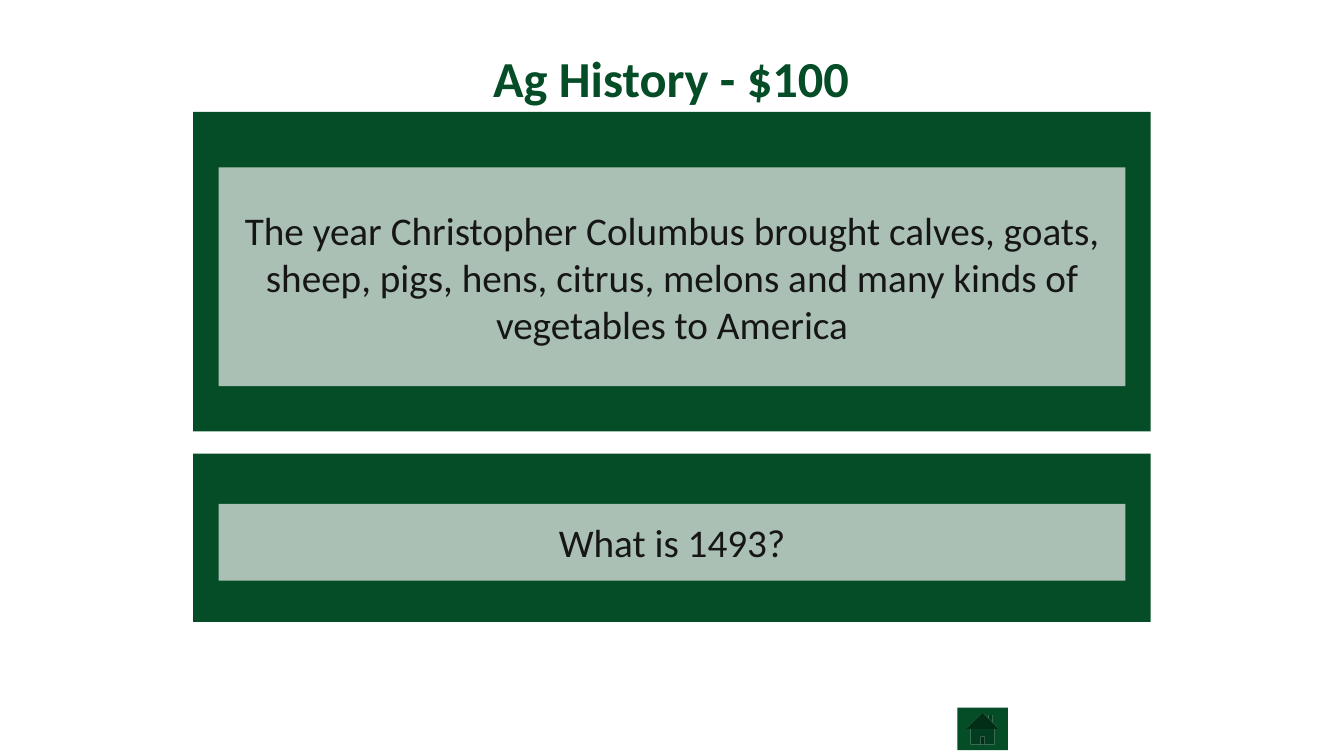
from lxml import etree
from pptx import Presentation
from pptx.dml.color import RGBColor
from pptx.enum.shapes import MSO_SHAPE
from pptx.enum.text import MSO_ANCHOR, MSO_AUTO_SIZE, PP_ALIGN
from pptx.oxml.ns import qn
from pptx.util import Cm, Pt

GREEN = RGBColor(0x04, 0x4D, 0x27)
PALE = RGBColor(0xF2, 0xF2, 0xF2)
INK = RGBColor(0x16, 0x16, 0x16)
FONT = "Calibri"


def add_block(slide, kind, left, top, width, height, color):
    """Add a plain filled shape without outline or shadow."""
    sp = slide.shapes.add_shape(kind, left, top, width, height)
    sp.shadow.inherit = False
    sp.fill.solid()
    sp.fill.fore_color.rgb = color
    sp.line.fill.background()
    return sp


def write_centred(tf, text, size, color, bold=False):
    tf.text = text
    tf.word_wrap = True
    p = tf.paragraphs[0]
    p.alignment = PP_ALIGN.CENTER
    p.space_before = Pt(0)
    font = p.runs[0].font
    font.name, font.size, font.bold = FONT, Pt(size), bold
    font.color.rgb = color


def add_title(slide, text, left, top, width, height):
    title = slide.shapes.title
    title.left, title.top, title.width, title.height = left, top, width, height
    tf = title.text_frame
    tf.margin_left = tf.margin_right = tf.margin_top = tf.margin_bottom = 0
    tf.vertical_anchor = MSO_ANCHOR.TOP
    tf.auto_size = MSO_AUTO_SIZE.NONE
    write_centred(tf, text, 36, GREEN, bold=True)
    p = tf.paragraphs[0]
    p.line_spacing = 1.0


def add_card(slide, text, left, top, width, height, inset_top, panel_height):
    """Add a green frame with a translucent text panel inside it."""
    add_block(slide, MSO_SHAPE.RECTANGLE, left, top, width, height, GREEN)
    side = Cm(0.64)
    panel = add_block(slide, MSO_SHAPE.RECTANGLE, left + side, top + inset_top,
                      width - 2 * side, panel_height, PALE)
    # 70 % opacity
    color = panel.fill._xPr.find(qn("a:solidFill"))[0]
    etree.SubElement(color, qn("a:alpha")).set("val", "70000")
    tf = panel.text_frame
    tf.vertical_anchor = MSO_ANCHOR.MIDDLE
    write_centred(tf, text, 28, INK)


def build_question_slide(prs, heading, clue, response):
    slide = prs.slides.add_slide(prs.slide_layouts[5])
    left, width = Cm(4.87), Cm(24.13)
    # Heading
    add_title(slide, heading, Cm(0.61), Cm(1.19), Cm(32.61), Cm(2.36))
    # Clue and response cards
    add_card(slide, clue, left, Cm(2.82), width, Cm(8.05), Cm(1.4), Cm(5.51))
    add_card(slide, response, left, Cm(11.43), width, Cm(4.24), Cm(1.27), Cm(1.93))
    # Home button
    add_block(slide, MSO_SHAPE.ACTION_BUTTON_HOME,
              Cm(24.13), Cm(17.83), Cm(1.27), Cm(1.07), GREEN)


def main():
    prs = Presentation()
    prs.slide_width, prs.slide_height = Cm(33.87), Cm(19.05)
    build_question_slide(
        prs,
        "Ag History - $100",
        "The year Christopher Columbus brought calves, goats, sheep, pigs, hens, "
        "citrus, melons and many kinds of vegetables to America",
        "What is 1493?",
    )
    prs.save("out.pptx")


if __name__ == "__main__":
    main()
